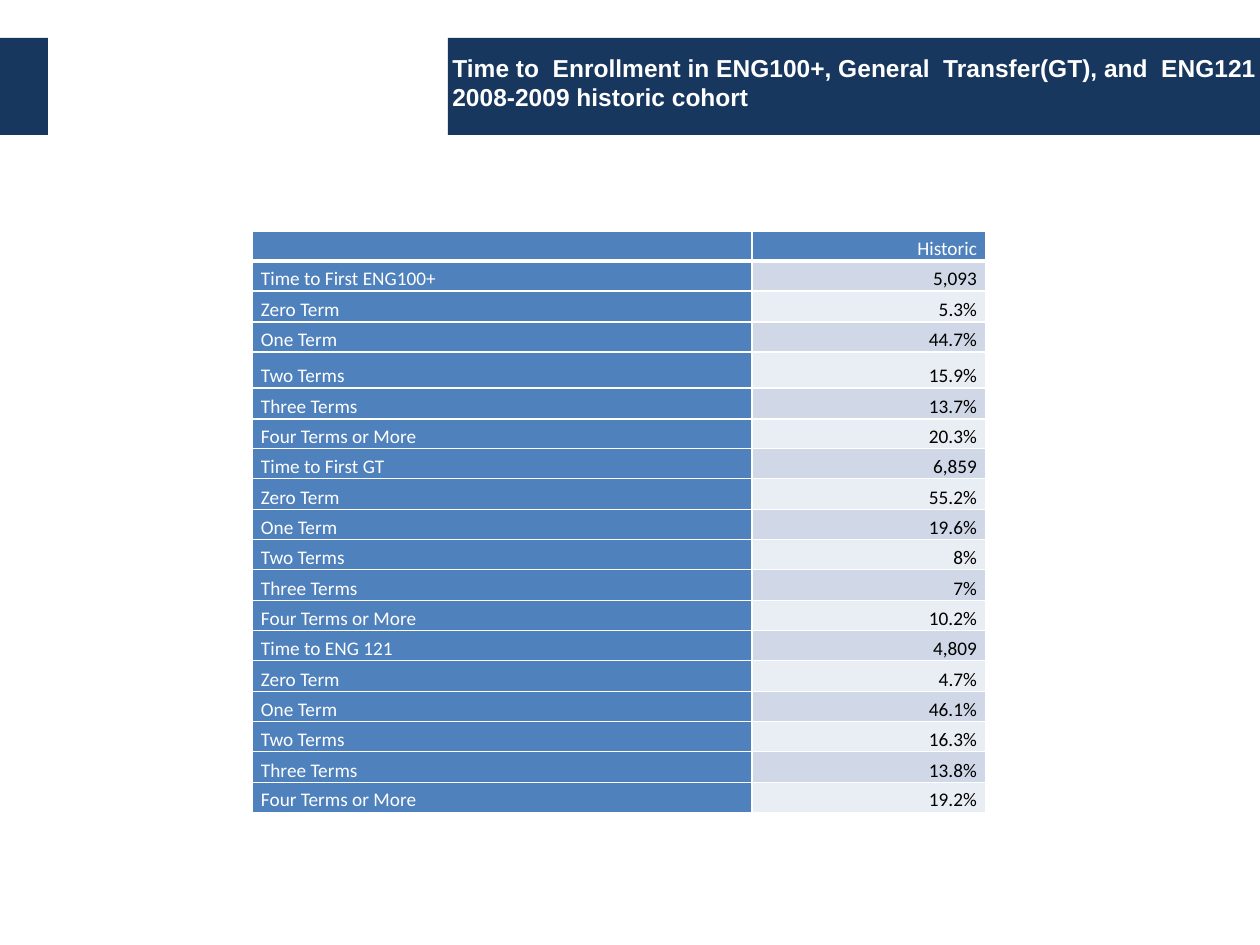
"""Build the slide on time to enrollment for the 2008-2009 historic cohort."""
import pptx
import pptx.chart
import pptx.dml.color
import pptx.enum.shapes
import pptx.enum.text
import pptx.oxml
import pptx.oxml.ns
import pptx.util

PX = 914400 // 126
HUES = {"navy": "17375E", "blue": "4F81BD", "dark": "D0D8E8",
        "light": "E9EDF4", "white": "FFFFFF", "black": "000000"}
TERMS = ["Zero Term", "One Term", "Two Terms", "Three Terms", "Four Terms or More"]
GROUPS = [
    ("Time to First ENG100+", "5,093", ["5.3%", "44.7%", "15.9%", "13.7%", "20.3%"]),
    ("Time to First GT", "6,859", ["55.2%", "19.6%", "8%", "7%", "10.2%"]),
    ("Time to ENG 121", "4,809", ["4.7%", "46.1%", "16.3%", "13.8%", "19.2%"]),
]


def color(name):
    return pptx.dml.color.RGBColor.from_string(HUES[name])


def style(para, face, size, hue, bold):
    for run in para.runs:
        run.font.name = face
        run.font.size = pptx.util.Pt(size)
        run.font.bold = bold
        run.font.color.rgb = color(hue)


deck = pptx.Presentation()
deck.slide_width = 1260 * PX
deck.slide_height = 945 * PX
slide = deck.slides.add_slide(deck.slide_layouts[6])

for left, width in [(448, 812), (0, 48)]:
    bar = slide.shapes.add_shape(pptx.enum.shapes.MSO_SHAPE.RECTANGLE,
                                 left * PX, 38 * PX, width * PX, 97 * PX)
    bar.shadow.inherit = False
    bar.fill.solid()
    bar.fill.fore_color.rgb = color("navy")
    bar.line.fill.background()

title = slide.shapes.add_textbox(440 * PX, 19 * PX, 871 * PX, 127 * PX)
frame = title.text_frame
frame.word_wrap = True
frame.vertical_anchor = pptx.enum.text.MSO_ANCHOR.MIDDLE
frame.text = ("Time to  Enrollment in ENG100+, General  Transfer(GT), and  ENG121\v"
              "2008-2009 historic cohort")
style(frame.paragraphs[0], "Arial", 14, "white", True)

rows = [("", "Historic")]
for name, total, shares in GROUPS:
    rows += [(name, total), *zip(TERMS, shares)]

table = slide.shapes.add_table(len(rows), 2, 252 * PX, 231 * PX, 734 * PX, 583 * PX).table
for col, width in zip(table.columns, [500, 234]):
    col.width = width * PX

for r, row in enumerate(rows):
    tall = 36 if r == 4 else 31 if r % 3 == 2 else 30
    table.rows[r].height = tall * PX
    for c, text in enumerate(row):
        cell = table.cell(r, c)
        cell.margin_left = cell.margin_right = 9 * PX
        cell.margin_top = cell.margin_bottom = 0
        cell.vertical_anchor = pptx.enum.text.MSO_ANCHOR.BOTTOM
        props = cell._tc.get_or_add_tcPr()
        for side in "LRTB":
            thick = 3 if r == 0 and side == "B" else 1
            props.append(pptx.oxml.parse_xml(
                f'<a:ln{side} {pptx.oxml.ns.nsdecls("a")} w="{thick * 12700}"><a:solidFill>'
                f'<a:srgbClr val="{HUES["white"]}"/></a:solidFill></a:ln{side}>'))
        head = r == 0 or c == 0
        cell.fill.solid()
        cell.fill.fore_color.rgb = color("blue" if head else "dark" if r % 2 else "light")
        para = cell.text_frame.paragraphs[0]
        para.text = text
        para.line_spacing = 1.15
        if c == 1:
            para.alignment = pptx.enum.text.PP_ALIGN.RIGHT
        style(para, "Calibri", 11, "white" if head else "black", False)
        if not text:
            para._p.get_or_add_endParaRPr().set("sz", "1100")

deck.save("out.pptx")
